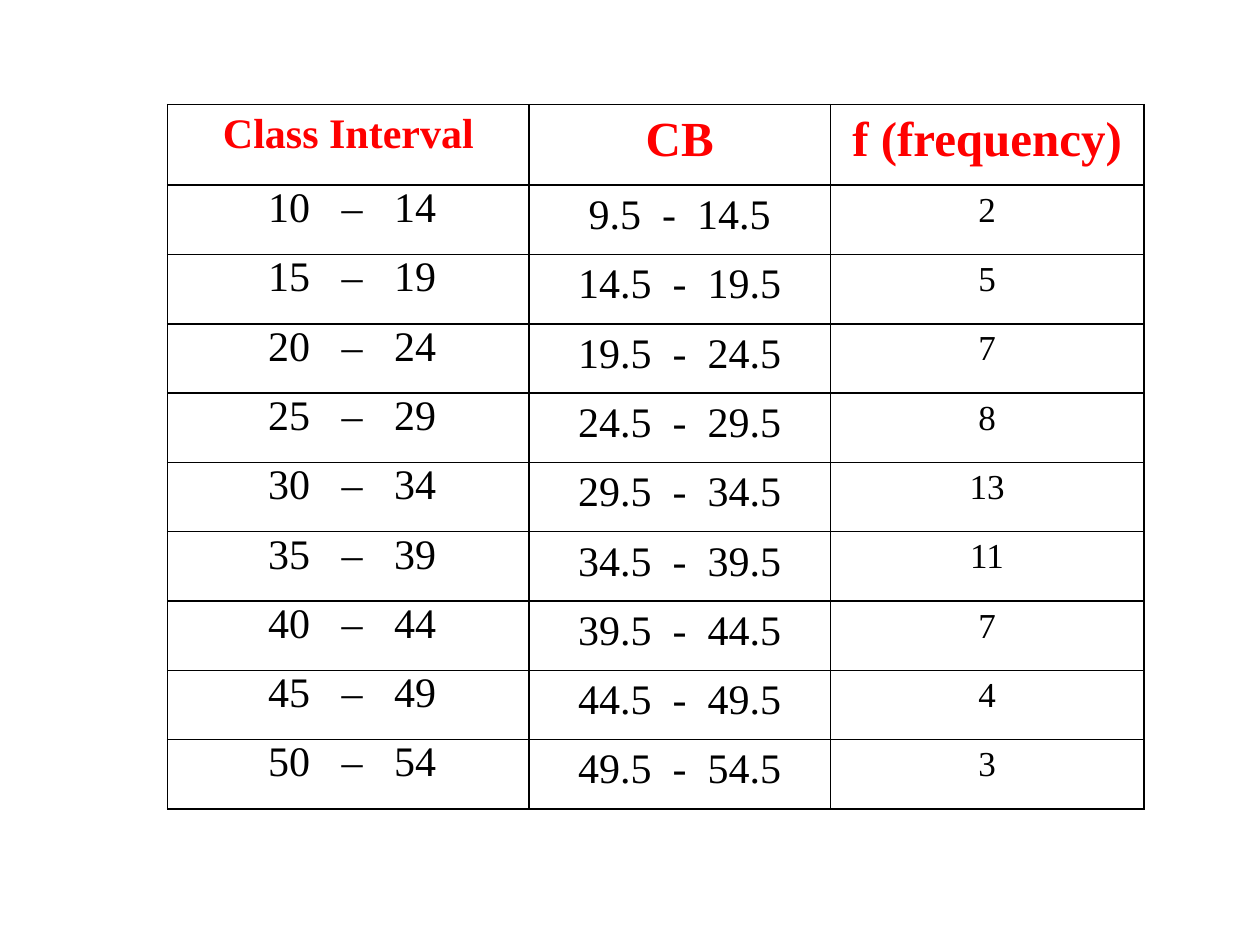
"""Build a slide with a frequency table of class intervals and boundaries."""
from dataclasses import dataclass

from lxml import etree
from pptx import Presentation
from pptx.dml.color import RGBColor
from pptx.enum.text import PP_ALIGN
from pptx.oxml.ns import qn
from pptx.util import Inches, Pt

CENTER = PP_ALIGN.CENTER

HEADERS = ["Class Interval", "CB", "f (frequency)"]
FREQUENCIES = [2, 5, 7, 8, 13, 11, 7, 4, 3]
FIRST_LIMIT, CLASS_WIDTH = 10, 5

LEFT, TOP = 1.33, 0.83
COL_WIDTHS = [2.87, 2.39, 2.49]
HEADER_HEIGHT, ROW_HEIGHT = 0.64, 0.55


@dataclass(frozen=True)
class Theme:
    font: str = "Times New Roman"
    header: str = "FF0000"
    ink: str = "000000"
    paper: str = "FFFFFF"
    header_sizes: tuple = (24, 28, 28)
    body_sizes: tuple = (24, 24, 20)
    border: float = 1


THEME = Theme()


def class_rows():
    rows = []
    for i, count in enumerate(FREQUENCIES):
        low = FIRST_LIMIT + i * CLASS_WIDTH
        high = low + CLASS_WIDTH - 1
        rows.append([f"{low}   –   {high}", f"{low - 0.5}  -  {high + 0.5}", str(count)])
    return rows


def write(tf, text, *, size, color, bold=False, before=4.5, spacing=1.15, indent=0):
    p = tf.paragraphs[0]
    p.alignment = CENTER
    p.space_before = Pt(before)
    p.line_spacing = spacing
    if indent:
        p._p.get_or_add_pPr().set("marL", str(Inches(indent)))
    r = p.add_run()
    r.text = text
    r.font.name = THEME.font
    r.font.size = Pt(size)
    r.font.bold = bold
    r.font.color.rgb = RGBColor.from_string(color)


def style_cell(cell):
    cell.margin_left = cell.margin_right = Inches(0.07)
    cell.margin_top = cell.margin_bottom = 0
    tc_pr = cell._tc.get_or_add_tcPr()
    for side in ("lnL", "lnR", "lnT", "lnB"):
        ln = etree.SubElement(tc_pr, qn(f"a:{side}"), w=str(Pt(THEME.border)))
        fill = etree.SubElement(ln, qn("a:solidFill"))
        etree.SubElement(fill, qn("a:srgbClr"), val=THEME.ink)
    cell.fill.solid()
    cell.fill.fore_color.rgb = RGBColor.from_string(THEME.paper)


def add_frequency_table(s):
    rows = [HEADERS] + class_rows()
    heights = [HEADER_HEIGHT] + [ROW_HEIGHT] * len(FREQUENCIES)
    table = s.shapes.add_table(
        len(rows), len(HEADERS), Inches(LEFT), Inches(TOP),
        Inches(sum(COL_WIDTHS)), Inches(sum(heights))).table
    table.first_row = table.horz_banding = False
    for col, width in zip(table.columns, COL_WIDTHS):
        col.width = Inches(width)
    for i, (texts, height) in enumerate(zip(rows, heights)):
        table.rows[i].height = Inches(height)
        head = i == 0
        sizes = THEME.header_sizes if head else THEME.body_sizes
        for j, text in enumerate(texts):
            cell = table.cell(i, j)
            style_cell(cell)
            interval = {"before": 4.7, "spacing": 1.0, "indent": 0.06}
            extra = interval if j == 0 and not head else {}
            write(cell.text_frame, text, size=sizes[j], bold=head,
                  color=THEME.header if head else THEME.ink, **extra)


def main():
    prs = Presentation()
    prs.slide_width, prs.slide_height = Inches(10), Inches(7.5)
    s = prs.slides.add_slide(prs.slide_layouts[6])
    add_frequency_table(s)
    prs.save("out.pptx")


if __name__ == "__main__":
    main()
